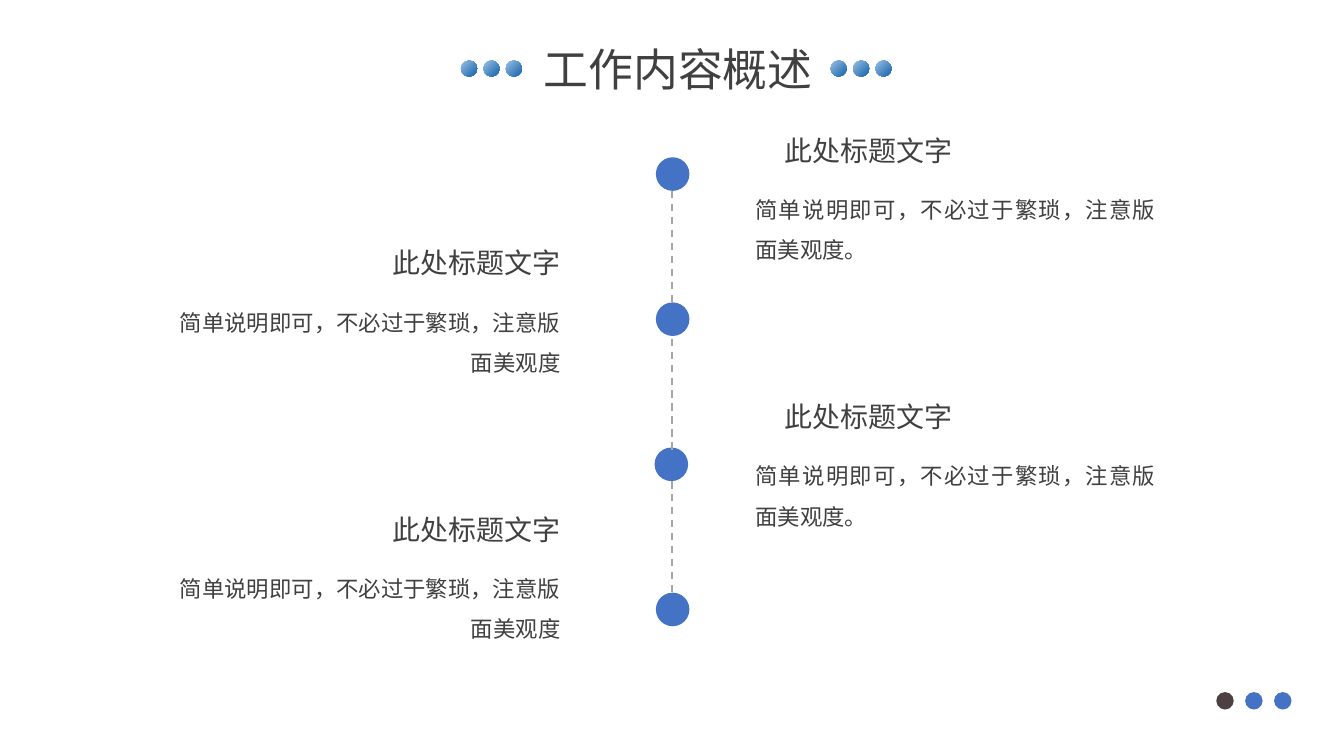
from lxml import etree
from pptx import Presentation
from pptx.dml.color import RGBColor
from pptx.enum import dml, shapes, text
from pptx.oxml.ns import qn
from pptx.util import Inches, Pt

FONT = "Noto Sans CJK SC"
BLUE, DARK, GREY, INK = "4472C4", "4C4042", "A6A6A6", "404040"
GRADIENT = ((0, "9DC3E6"), (0.81, "2E75B6"))
ALIGN = text.PP_ALIGN


def set_color(color, value):
    """Give a colour format an RRGGBB value."""
    color.rgb = RGBColor.from_string(value)


def add_dot(s, x, y, size, fill=None):
    """Add a borderless circle, with the title gradient if no fill is given."""
    sp = s.shapes.add_shape(shapes.MSO_SHAPE.OVAL, Inches(x), Inches(y),
                            Inches(size), Inches(size))
    sp.shadow.inherit = False
    sp.line.fill.background()
    if fill:
        sp.fill.solid()
        set_color(sp.fill.fore_color, fill)
    else:
        sp.fill.gradient()
        sp.fill.gradient_angle = 315
        for stop, (position, value) in zip(sp.fill.gradient_stops, GRADIENT):
            stop.position = position
            set_color(stop.color, value)


def add_dash(s, x, top, bottom):
    """Add a vertical dashed line."""
    line = s.shapes.add_connector(shapes.MSO_CONNECTOR.STRAIGHT, Inches(x),
                                  Inches(top), Inches(x), Inches(bottom))
    set_color(line.line.color, GREY)
    line.line.width = Pt(1)
    line.line.dash_style = dml.MSO_LINE.DASH
    etree.SubElement(line._element.spPr, qn("a:effectLst"))


def add_text(s, box, words, size, align, wrap=True, inset=True, spacing=None):
    """Add a one-paragraph text box."""
    sp = s.shapes.add_textbox(*map(Inches, box))
    tf = sp.text_frame
    tf.text = words
    tf.word_wrap = wrap
    tf.auto_size = text.MSO_AUTO_SIZE.SHAPE_TO_FIT_TEXT
    if not inset:
        tf.margin_left = tf.margin_right = tf.margin_top = tf.margin_bottom = 0
    p = tf.paragraphs[0]
    p.alignment = align
    if spacing:
        p.line_spacing = spacing
    font = p.runs[0].font
    font.size = Pt(size)
    font.name = FONT
    set_color(font.color, INK)
    etree.SubElement(font._element, qn("a:ea")).set("typeface", FONT)


def add_entry(s, heading_x, body_x, y, body, align):
    """Add a heading with its description below."""
    add_text(s, (heading_x, y, 1.26, 0.25), "此处标题文字", 15, align,
             wrap=False, inset=False)
    add_text(s, (body_x, y + 0.37, 2.98, 0.61), body, 12, align,
             inset=False, spacing=1.5)


def add_title(s):
    """Add the slide title between two rows of three dots."""
    add_text(s, (2, 0.26, 6.09, 0.5), "工作内容概述", 24, ALIGN.CENTER)
    for left in (3.43, 6.18):
        for i in range(3):
            add_dot(s, left + i / 6, 0.45, 0.12)


def add_timeline(s):
    """Add the four milestones and the dashes between them."""
    for i, x in enumerate((4.88, 4.88, 4.87, 4.88)):
        add_dot(s, x, 1.17 + i * 1.08, 0.25, BLUE)
    for top in (1.42, 2.52, 3.58):
        add_dash(s, 5, top, top + 0.83)


def main():
    """Build and save the slide."""
    prs = Presentation()
    prs.slide_width, prs.slide_height = Inches(10), Inches(10 * 9 / 16)
    s = prs.slides.add_slide(prs.slide_layouts[6])
    add_timeline(s)
    body = "简单说明即可，不必过于繁琐，注意版面美观度"
    for offset in (0, 1.98):
        add_entry(s, 5.84, 5.62, 0.99 + offset, body + "。", ALIGN.JUSTIFY)
        add_entry(s, 2.91, 1.19, 1.83 + offset, body, ALIGN.RIGHT)
    add_title(s)
    for i, fill in enumerate((DARK, BLUE, BLUE)):
        add_dot(s, 9.05 + i * 0.215, 5.15, 0.13, fill)
    prs.save("out.pptx")


if __name__ == "__main__":
    main()
